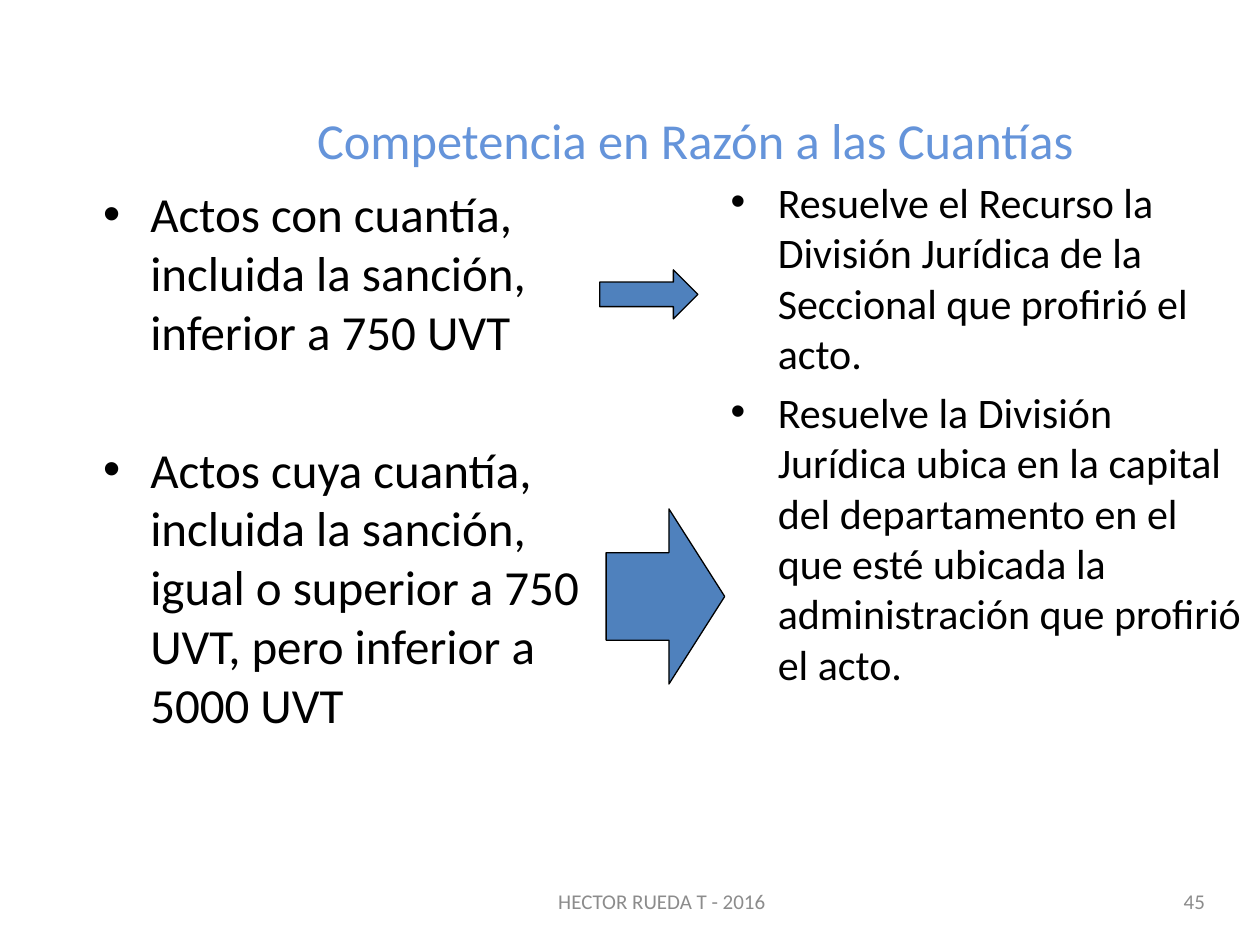
import dataclasses

import pptx
import pptx.dml.color
import pptx.enum.shapes
import pptx.enum.text
import pptx.util
from lxml import etree
from pptx.oxml.ns import qn

Cm, Pt = pptx.util.Cm, pptx.util.Pt
ALIGN = pptx.enum.text.PP_ALIGN
ANCHOR = pptx.enum.text.MSO_ANCHOR
BLACK, GREY, BLUE, TITLE = "000000", "8C8C8C", "4F81BD", "6594DA"


@dataclasses.dataclass
class Box:
    left: float
    top: float
    width: float
    height: float

    def lengths(self):
        return [Cm(v) for v in dataclasses.astuple(self)]


@dataclasses.dataclass
class Column:
    box: Box
    size: float
    gap: float
    items: list[str]


@dataclasses.dataclass
class Label:
    box: Box
    align: ALIGN
    text: str


@dataclasses.dataclass
class Arrow:
    box: Box
    head: float


COLUMNS = [
    Column(Box(1.83, 3.58, 10.92, 12.19), 28, 45, [
        "Actos con cuantía, incluida la sanción, inferior a 750 UVT",
        "Actos cuya cuantía, incluida la sanción, igual o superior a 750 UVT, "
        "pero inferior a 5000 UVT",
    ]),
    Column(Box(14.48, 3.43, 10.92, 12.19), 24, 4.8, [
        "Resuelve el Recurso la División Jurídica de la Seccional que "
        "profirió el acto.",
        "Resuelve la División Jurídica ubica en la capital del departamento "
        "en el que esté ubicada la administración que profirió el acto.",
    ]),
]
LABELS = [
    Label(Box(9.32, 17.65, 8.05, 1.02), ALIGN.CENTER, "HECTOR RUEDA T - 2016"),
    Label(Box(18.62, 17.65, 5.92, 1.02), ALIGN.RIGHT, "45"),
]
ARROWS = [
    Arrow(Box(12.09, 5.44, 1.98, 0.99), 0.5),
    Arrow(Box(12.22, 10.26, 2.39, 3.53), 0.47),
]


def color(code: str):
    return pptx.dml.color.RGBColor.from_string(code)


def style(para, size: float, code: str):
    para.font.name = "Calibri"
    para.font.size = Pt(size)
    para.font.color.rgb = color(code)


def add_bullet(para):
    props = para._p.get_or_add_pPr()
    props.set("marL", str(Cm(0.95)))
    props.set("indent", str(-Cm(0.95)))
    etree.SubElement(props, qn("a:buFont")).set("typeface", "Arial")
    etree.SubElement(props, qn("a:buChar")).set("char", "•")


def add_frame(slide, box: Box):
    frame = slide.shapes.add_textbox(*box.lengths()).text_frame
    frame.word_wrap = True
    return frame


def set_title(slide, box: Box, text: str):
    title = slide.shapes.title
    title.left, title.top, title.width, title.height = box.lengths()
    frame = title.text_frame
    frame.text = text
    frame.vertical_anchor = ANCHOR.MIDDLE
    frame.margin_bottom = Cm(1.35)
    para = frame.paragraphs[0]
    para.alignment = ALIGN.CENTER
    style(para, 28.8, TITLE)


def add_column(slide, col: Column):
    frame = add_frame(slide, col.box)
    for i, item in enumerate(col.items):
        para = frame.add_paragraph() if i else frame.paragraphs[0]
        para.text = item
        if i:
            para.space_before = Pt(col.gap)
        add_bullet(para)
        style(para, col.size, BLACK)


def add_label(slide, label: Label):
    frame = add_frame(slide, label.box)
    frame.vertical_anchor = ANCHOR.MIDDLE
    para = frame.paragraphs[0]
    para.text = label.text
    para.alignment = label.align
    style(para, 12, GREY)


def add_arrow(slide, arrow: Arrow):
    kind = pptx.enum.shapes.MSO_SHAPE.RIGHT_ARROW
    shape = slide.shapes.add_shape(kind, *arrow.box.lengths())
    shape.adjustments[1] = arrow.head
    shape.shadow.inherit = False
    shape.fill.solid()
    shape.fill.fore_color.rgb = color(BLUE)
    shape.line.color.rgb = color(BLACK)
    shape.line.width = Pt(0.75)


def main():
    deck = pptx.Presentation()
    deck.slide_width, deck.slide_height = Cm(25.4), Cm(19.05)
    slide = deck.slides.add_slide(deck.slide_layouts[5])
    set_title(slide, Box(3.2, 1.98, 21.64, 2.9),
              "Competencia en Razón a las Cuantías")
    for col in COLUMNS:
        add_column(slide, col)
    for label in LABELS:
        add_label(slide, label)
    for arrow in ARROWS:
        add_arrow(slide, arrow)
    deck.save("out.pptx")


if __name__ == "__main__":
    main()
